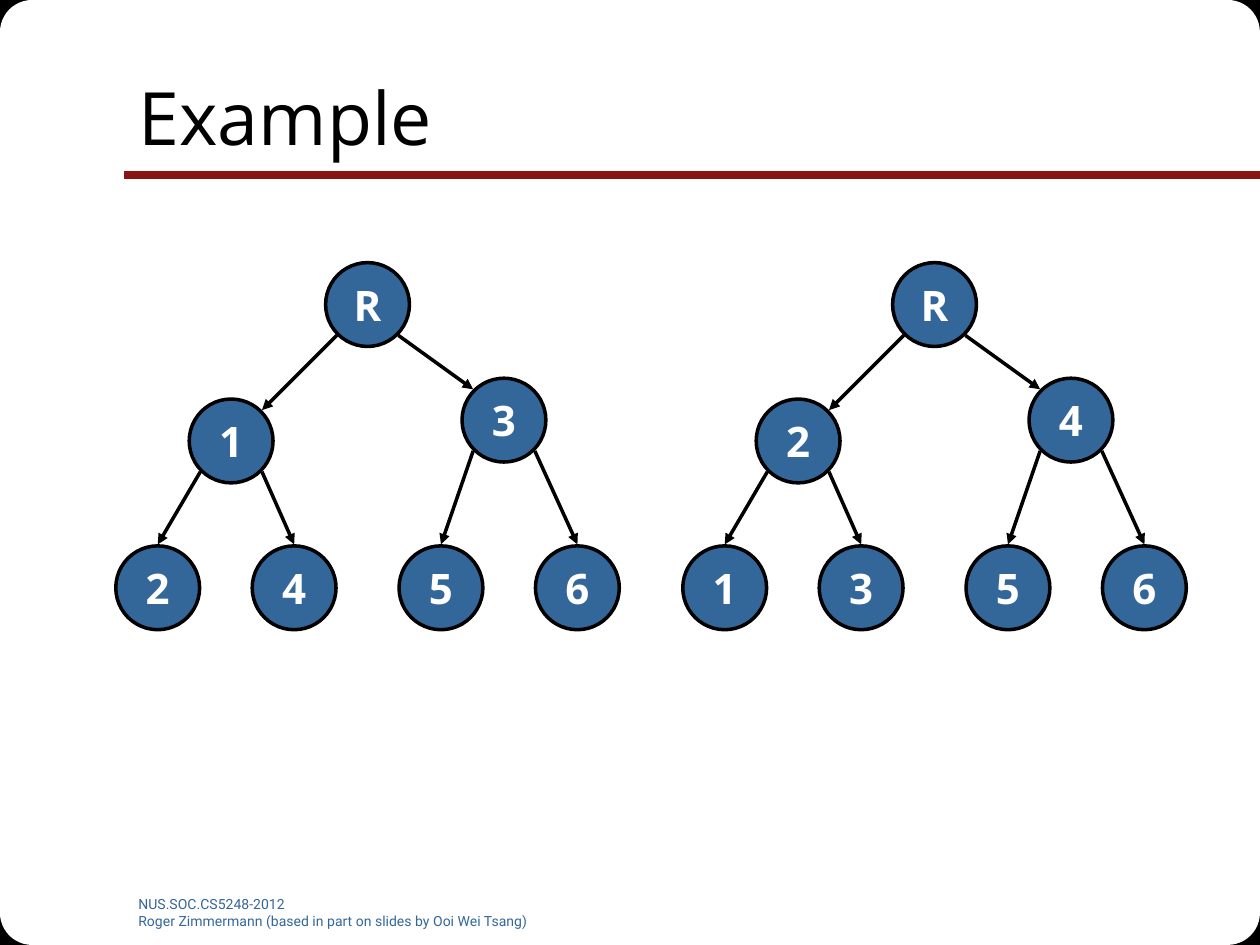
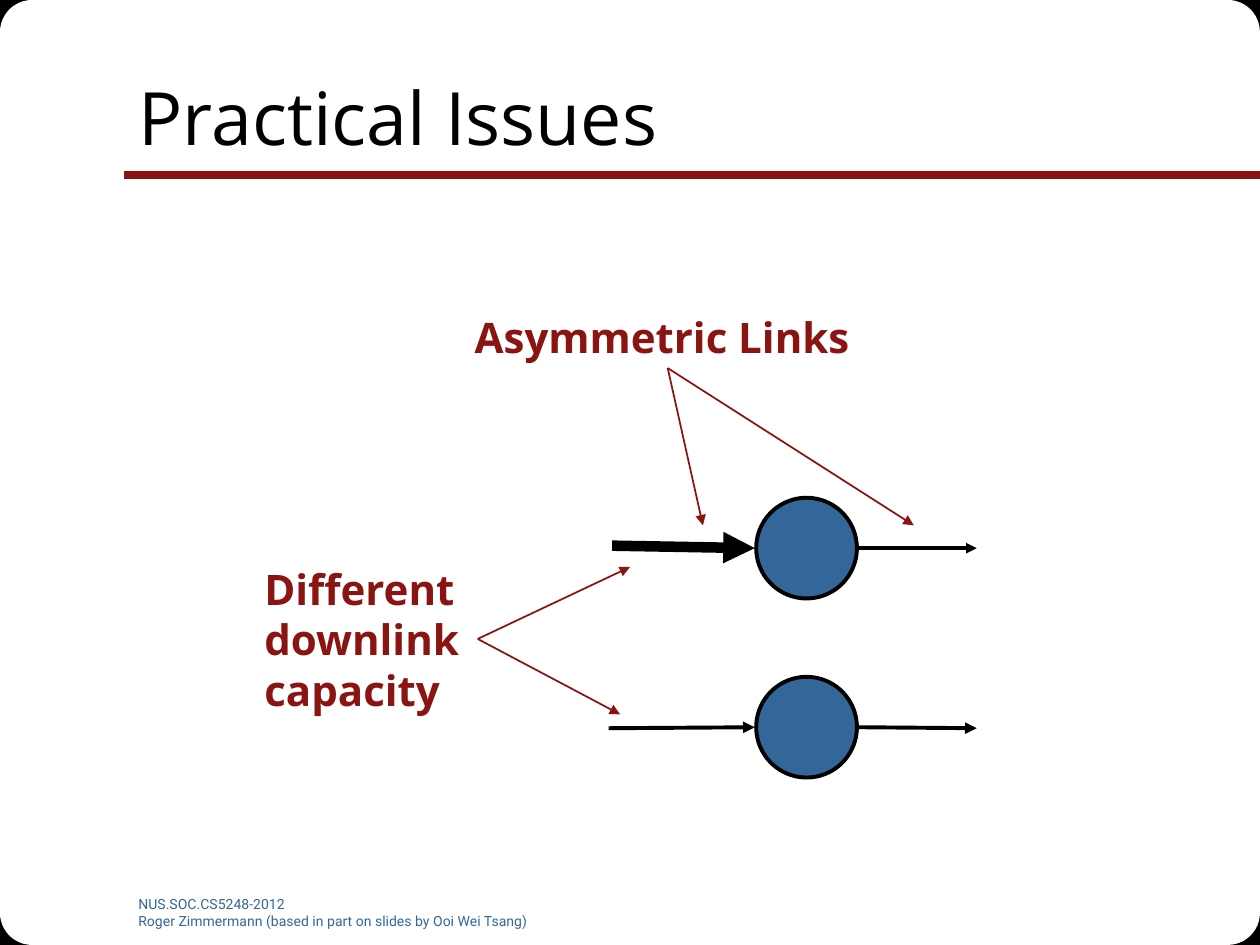
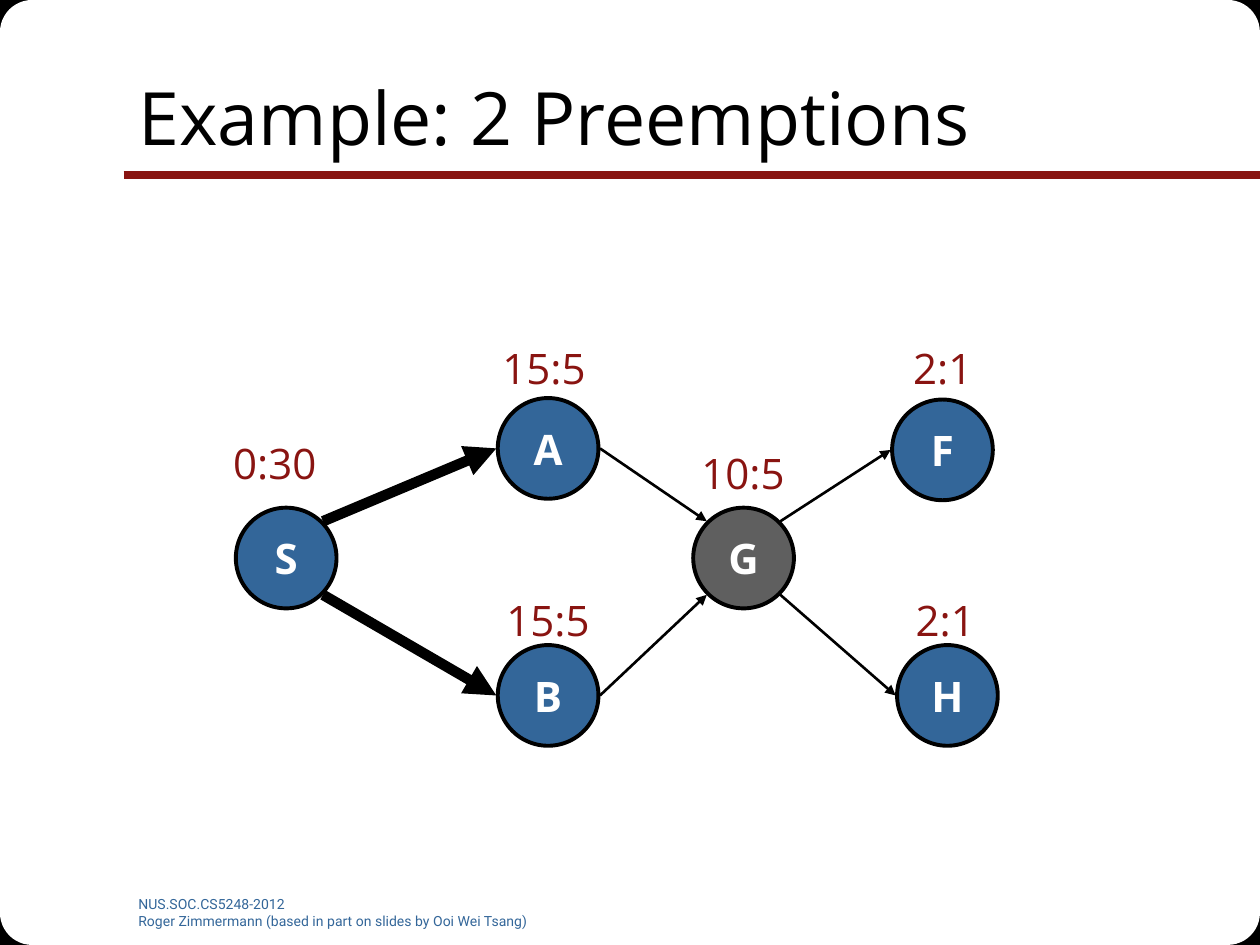
from collections import namedtuple

from pptx import Presentation
from pptx.dml.color import RGBColor
from pptx.enum.shapes import MSO_CONNECTOR, MSO_SHAPE, PP_PLACEHOLDER
from pptx.enum.text import MSO_ANCHOR, MSO_AUTO_SIZE, PP_ALIGN
from pptx.oxml.ns import qn
from pptx.util import Cm, Pt
from lxml.etree import SubElement

BLACK = RGBColor(0x00, 0x00, 0x00)
WHITE = RGBColor(0xFF, 0xFF, 0xFF)
BLUE = RGBColor(0x33, 0x66, 0x99)
RED = RGBColor(0x89, 0x14, 0x11)
GREY = RGBColor(0x5F, 0x5F, 0x5F)

MAIN_FONT = "Open Sans"
FOOTER_FONT = "Roboto"
FOOTER_LINES = [
    "NUS.SOC.CS5248-2012",
    "Roger Zimmermann (based in part on slides by Ooi Wei Tsang)",
]

SLIDE_W, SLIDE_H = 25.4, 19.05
LINK_GAP = 0.03  # space between a circle and the link that meets it

# Directions from the centre of a circle to the places where links meet it
TOP, LEFT, RIGHT = (0, -1), (-1, 0), (1, 0)
UPPER_LEFT, UPPER_RIGHT = (-0.71, -0.71), (0.71, -0.71)
LOWER_LEFT, LOWER_RIGHT = (-0.71, 0.71), (0.71, 0.71)

Node = namedtuple("Node", "x y diameter")


# Text
def add_run(paragraph, text, size, color, font=MAIN_FONT, bold=False):
    run = paragraph.add_run()
    run.text = text
    run.font.name = font
    run.font.size = Pt(size)
    run.font.bold = bold
    run.font.color.rgb = color


def add_text(slide, lines, x, y, width, height, size=24, color=RED,
             font=MAIN_FONT, bold=False, wrap=False):
    box = slide.shapes.add_textbox(Cm(x), Cm(y), Cm(width), Cm(height))
    frame = box.text_frame
    frame.word_wrap = wrap
    for index, line in enumerate(lines):
        paragraph = frame.add_paragraph() if index else frame.paragraphs[0]
        add_run(paragraph, line, size, color, font, bold)


def add_title(slide, text):
    title = slide.shapes.title
    title.left, title.top = Cm(2.54), Cm(0.76)
    title.width, title.height = Cm(21.59), Cm(3.18)
    frame = title.text_frame
    frame.auto_size = MSO_AUTO_SIZE.NONE
    frame.vertical_anchor = MSO_ANCHOR.MIDDLE
    frame.paragraphs[0].alignment = PP_ALIGN.LEFT
    add_run(frame.paragraphs[0], text, 42, BLACK)


# Shapes and lines
def add_filled(slide, kind, x, y, width, height, fill, line_width=0):
    shape = slide.shapes.add_shape(kind, Cm(x), Cm(y), Cm(width), Cm(height))
    shape.shadow.inherit = False
    shape.fill.solid()
    shape.fill.fore_color.rgb = fill
    if line_width:
        shape.line.color.rgb = BLACK
        shape.line.width = Pt(line_width)
    else:
        shape.line.fill.background()
    return shape


def add_node(slide, x, y, diameter, label="", fill=BLUE, line_width=2.25):
    """Draw a circle around its centre and return its geometry."""
    circle = add_filled(slide, MSO_SHAPE.OVAL, x - diameter / 2,
                        y - diameter / 2, diameter, diameter, fill, line_width)
    if label:
        frame = circle.text_frame
        frame.word_wrap = False
        frame.vertical_anchor = MSO_ANCHOR.MIDDLE
        frame.paragraphs[0].alignment = PP_ALIGN.CENTER
        add_run(frame.paragraphs[0], label, 24, WHITE, bold=True)
    return Node(x, y, diameter)


def add_line(slide, start, end, color, width):
    line = slide.shapes.add_connector(
        MSO_CONNECTOR.STRAIGHT, *(Cm(value) for value in (*start, *end)))
    line.line.color.rgb = color
    line.line.width = Pt(width)
    SubElement(line.element.spPr, qn("a:effectLst"))
    return line


def add_arrow(slide, start, end, color=BLACK, width=2.0):
    arrow = add_line(slide, start, end, color, width)
    SubElement(arrow.line._get_or_add_ln(), qn("a:tailEnd"), type="triangle")


def meet(node, direction):
    """Point just outside a circle, in the given direction."""
    reach = node.diameter / 2 + LINK_GAP
    return node.x + direction[0] * reach, node.y + direction[1] * reach


# Shared frame: rounded black corners and the rule under the title
def build_frame(layout, slide):
    for placeholder in list(layout.placeholders):
        if placeholder.placeholder_format.type != PP_PLACEHOLDER.TITLE:
            layout.shapes.element.remove(placeholder.element)

    frame_parts = []
    corners = [
        (MSO_SHAPE.RECTANGLE, 1.1, BLACK, 0.75),
        (MSO_SHAPE.ROUNDED_RECTANGLE, 3.89, WHITE, 0),
    ]
    for kind, size, fill, line_width in corners:
        for x in (0, SLIDE_W - size):
            for y in (0, SLIDE_H - size):
                frame_parts.append(add_filled(slide, kind, x, y, size, size,
                                              fill, line_width))
    frame_parts.append(add_line(slide, (2.49, 3.53), (SLIDE_W, 3.53), RED, 4.5))

    # The layout holds the frame, behind its title
    for position, part in enumerate(frame_parts, start=2):
        layout.shapes.element.insert(position, part.element)


def add_footer(slide):
    add_text(slide, FOOTER_LINES, 2.54, 17.93, 8.69, 0.71, size=8, color=BLUE,
             font=FOOTER_FONT, wrap=True)


# Slide 1: two trees over the same nodes
def add_tree(slide, offset, root, children, leaves):
    def tree_node(x, y, label):
        return add_node(slide, offset + x, y, 1.69, label, line_width=2)

    root_node = tree_node(7.41, 6.14, root)
    left = tree_node(4.66, 8.89, children[0])
    right = tree_node(10.16, 8.47, children[1])
    leaf_nodes = [tree_node(x, 11.85, label)
                  for x, label in zip((3.18, 5.93, 8.89, 11.64), leaves)]

    add_arrow(slide, meet(root_node, LOWER_LEFT), meet(left, UPPER_RIGHT))
    add_arrow(slide, meet(root_node, LOWER_RIGHT), meet(right, UPPER_LEFT))
    for index, leaf in enumerate(leaf_nodes):
        parent = (left, right)[index // 2]
        side = (LOWER_LEFT, LOWER_RIGHT)[index % 2]
        add_arrow(slide, meet(parent, side), meet(leaf, TOP))


def fill_trees(slide):
    add_tree(slide, 0, "R", "13", "2456")
    add_tree(slide, 11.43, "R", "24", "1356")


# Slide 2: links of unequal capacity
def fill_issues(slide):
    fast_host = add_node(slide, 16.26, 11.05, 2.03)
    slow_host = add_node(slide, 16.26, 14.66, 2.03)

    add_arrow(slide, (12.34, 11), meet(fast_host, LEFT), width=6)
    add_arrow(slide, (12.27, 14.68), meet(slow_host, LEFT), width=2.25)
    add_arrow(slide, meet(fast_host, RIGHT), (19.69, 11.05))
    add_arrow(slide, meet(slow_host, RIGHT), (19.69, 14.68), width=2.25)

    add_text(slide, ["Asymmetric Links"], 9.32, 6.15, 8.31, 1.27, bold=True)
    add_text(slide, ["Different", "downlink", "capacity"],
             5.08, 11.23, 4.55, 3.3, bold=True)
    callouts = [
        ((13.46, 7.42), [(14.17, 10.59), (18.42, 10.59)]),
        ((9.63, 12.88), [(12.7, 11.43), (12.5, 14.4)]),
    ]
    for start, targets in callouts:
        for target in targets:
            add_arrow(slide, start, target, RED, 1)


# Slide 3: a node taken over twice
def fill_preemptions(slide):
    centres = {
        "S": (5.77, 11.25), "A": (11.05, 9.04), "B": (11.05, 14.02),
        "G": (14.99, 11.25), "F": (19, 9.07), "H": (19.1, 14.02),
    }
    nodes = {
        label: add_node(slide, x, y, 2.03, label, GREY if label == "G" else BLUE)
        for label, (x, y) in centres.items()
    }

    links = [
        ("S", UPPER_RIGHT, "A", LEFT, 6), ("S", LOWER_RIGHT, "B", LEFT, 6),
        ("A", RIGHT, "G", UPPER_LEFT, 1.5), ("B", RIGHT, "G", LOWER_LEFT, 1.5),
        ("G", UPPER_RIGHT, "F", LEFT, 1.5), ("G", LOWER_RIGHT, "H", LEFT, 1.5),
    ]
    for source, exit_side, target, entry_side, width in links:
        add_arrow(slide, meet(nodes[source], exit_side),
                  meet(nodes[target], entry_side), width=width)

    capacities = [
        ("0:30", 4.45, 8.69, 2.39), ("15:5", 9.88, 6.78, 2.39),
        ("15:5", 9.96, 11.86, 2.39), ("10:5", 13.89, 8.89, 2.39),
        ("2:1", 18.16, 6.78, 1.85), ("2:1", 18.21, 11.86, 1.85),
    ]
    for text, x, y, width in capacities:
        add_text(slide, [text], x, y, width, 1.27)


def main():
    presentation = Presentation()
    presentation.slide_width, presentation.slide_height = Cm(SLIDE_W), Cm(SLIDE_H)
    title_only = presentation.slide_layouts[5]

    contents = [
        ("Example", fill_trees),
        ("Practical Issues", fill_issues),
        ("Example: 2 Preemptions", fill_preemptions),
    ]
    for index, (title, fill_slide) in enumerate(contents):
        slide = presentation.slides.add_slide(title_only)
        if index == 0:
            build_frame(title_only, slide)
        add_title(slide, title)
        add_footer(slide)
        fill_slide(slide)

    presentation.save("out.pptx")


if __name__ == "__main__":
    main()
